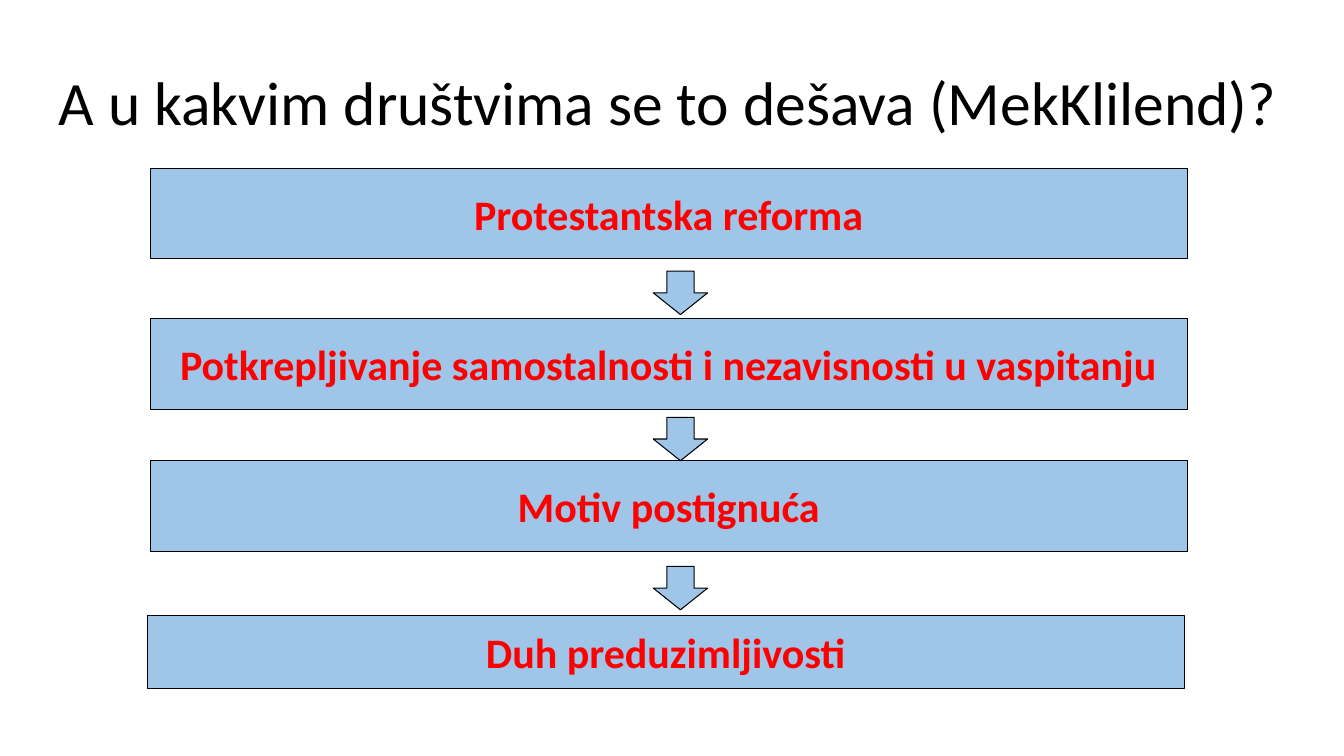
from dataclasses import dataclass
from typing import Any

from pptx import Presentation
from pptx.dml.color import RGBColor
from pptx.enum import shapes, text
from pptx.util import Pt


@dataclass(frozen=True)
class Theme:
    font: str = "Calibri"
    ink: str = "000000"
    fill: str = "9FC5E8"
    accent: str = "FF0000"
    head: float = 44
    body: float = 30
    line: float = 0.75


@dataclass(frozen=True)
class Box:
    label: str
    left: float
    top: float
    high: float = 64.8


THEME = Theme()
WIDE = 740.9
BOXES = [
    Box("Protestantska reforma", 107.3, 120.2),
    Box("Potkrepljivanje samostalnosti i nezavisnosti u vaspitanju", 107.3, 227.5),
    Box("Motiv postignuća", 107.3, 329),
    Box("Duh preduzimljivosti", 105.1, 439.9, 51.8),
]
ARROWS = [193.7, 298.1, 404.6]
FRAME = {
    "word_wrap": True,
    "auto_size": text.MSO_AUTO_SIZE.NONE,
    "vertical_anchor": text.MSO_ANCHOR.MIDDLE,
    "margin_left": Pt(7.2),
    "margin_right": Pt(7.2),
    "margin_top": Pt(3.6),
    "margin_bottom": Pt(3.6),
}


def apply(item: Any, values: dict[str, Any]) -> None:
    for name, value in values.items():
        setattr(item, name, value)


def write(shape: Any, words: str, para: dict[str, Any], font: dict[str, Any], color: str) -> None:
    frame = shape.text_frame
    apply(frame, FRAME)
    line = frame.paragraphs[0]
    apply(line, para)
    run = line.add_run()
    run.text = words
    apply(run.font, {"name": THEME.font, **font})
    run.font.color.rgb = RGBColor.from_string(color)


def draw(slide: Any, kind: Any, left: float, top: float, wide: float, high: float) -> Any:
    shape = slide.shapes.add_shape(kind, Pt(left), Pt(top), Pt(wide), Pt(high))
    shape.shadow.inherit = False
    shape.fill.solid()
    shape.fill.fore_color.rgb = RGBColor.from_string(THEME.fill)
    shape.line.color.rgb = RGBColor.from_string(THEME.ink)
    shape.line.width = Pt(THEME.line)
    return shape


def add_title(slide: Any) -> None:
    title = slide.shapes.title
    apply(title, {"left": Pt(34.6), "top": Pt(23), "width": Pt(902.2), "height": Pt(104.4)})
    write(
        title,
        "A u kakvim društvima se to dešava (MekKlilend)?",
        {"alignment": text.PP_ALIGN.LEFT, "line_spacing": 0.9},
        {"size": Pt(THEME.head), "bold": False},
        THEME.ink,
    )


def add_box(slide: Any, box: Box) -> None:
    shape = draw(slide, shapes.MSO_SHAPE.RECTANGLE, box.left, box.top, WIDE, box.high)
    write(
        shape,
        box.label,
        {"alignment": text.PP_ALIGN.CENTER},
        {"size": Pt(THEME.body), "bold": True},
        THEME.accent,
    )


def main() -> None:
    deck = Presentation()
    apply(deck, {"slide_width": Pt(960), "slide_height": Pt(540)})
    slide = deck.slides.add_slide(deck.slide_layouts.get_by_name("Title Only"))
    add_title(slide)
    for box in BOXES:
        add_box(slide, box)
    for top in ARROWS:
        draw(slide, shapes.MSO_SHAPE.DOWN_ARROW, 466.6, top, 38.9, 31)
    deck.save("out.pptx")


if __name__ == "__main__":
    main()
